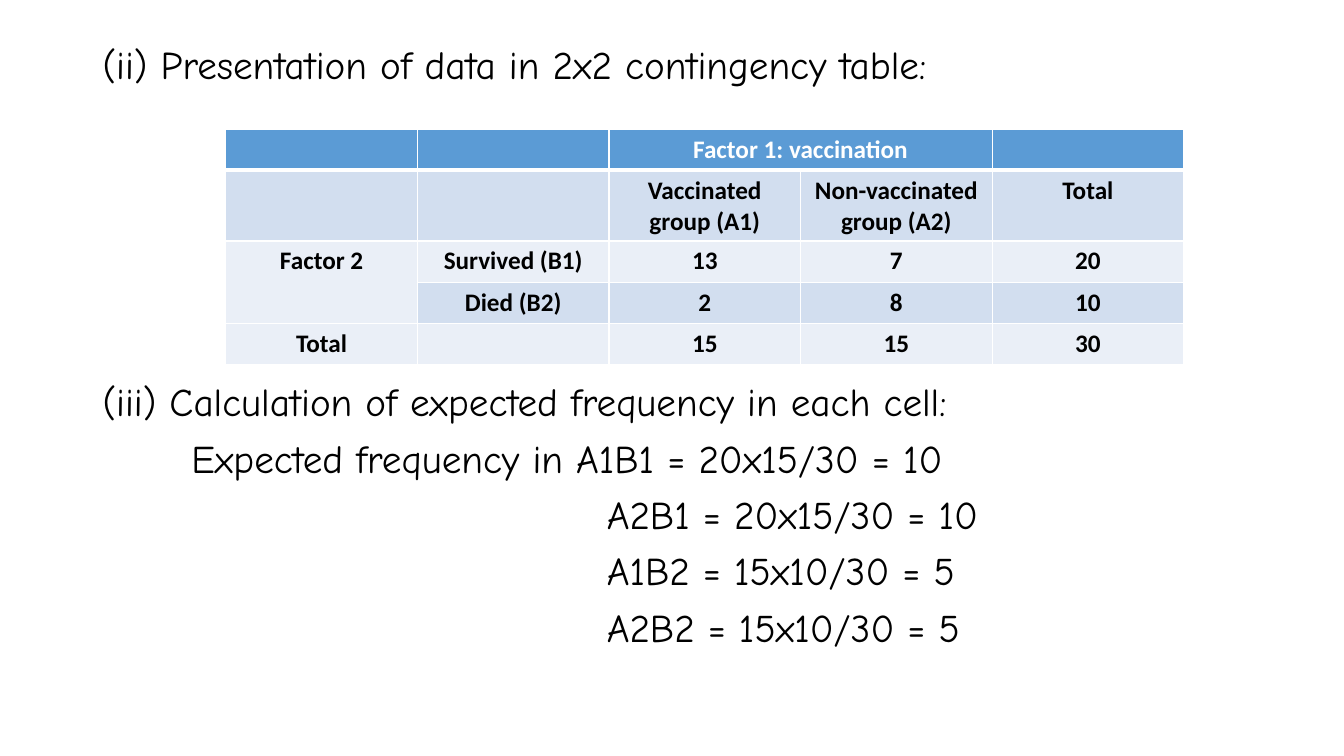
import dataclasses

import lxml.etree
import pptx
import pptx.dml.color
import pptx.enum.text
import pptx.oxml.ns
import pptx.util

Inches = pptx.util.Inches
Pt = pptx.util.Pt


@dataclasses.dataclass
class Theme:
    body_font: str = "Comic Neue"
    table_font: str = "Calibri"
    body_size: int = 28
    table_size: int = 18
    black: str = "000000"
    white: str = "FFFFFF"
    header: str = "5B9BD5"
    bands: tuple = ("D2DEEF", "EAEFF7")
    line_spacing: float = 0.9
    space_before: int = 10
    border: int = 1
    header_border: int = 3


class SlideBuilder:
    def __init__(self, slide, theme):
        self.slide = slide
        self.theme = theme

    def format_font(self, paragraph, color, **values):
        for name, value in values.items():
            setattr(paragraph.font, name, value)
        paragraph.font.color.rgb = pptx.dml.color.RGBColor.from_string(color)

    def text(self, left, top, width, height, lines):
        """Lines are pairs of text and left indent in inches."""
        theme = self.theme
        box = self.slide.shapes.add_textbox(
            Inches(left), Inches(top), Inches(width), Inches(height))
        frame = box.text_frame
        frame.word_wrap = True
        for index, (content, indent) in enumerate(lines):
            paragraph = frame.add_paragraph() if index else frame.paragraphs[0]
            paragraph.text = content
            paragraph.line_spacing = theme.line_spacing
            paragraph.space_before = Pt(theme.space_before if index else 0)
            if indent:
                properties = paragraph._p.get_or_add_pPr()
                properties.set("marL", str(Inches(indent)))
                properties.set("indent", "0")
            self.format_font(paragraph, theme.black,
                             name=theme.body_font, size=Pt(theme.body_size))

    def cell_borders(self, cell, widths):
        properties = cell._tc.get_or_add_tcPr()
        for side, width in widths.items():
            line = lxml.etree.SubElement(
                properties, pptx.oxml.ns.qn(f"a:ln{side}"), w=str(Pt(width)))
            fill = lxml.etree.SubElement(line, pptx.oxml.ns.qn("a:solidFill"))
            lxml.etree.SubElement(
                fill, pptx.oxml.ns.qn("a:srgbClr"), val=self.theme.white)

    def table(self, left, top, column_width, row_heights, rows, merges):
        theme = self.theme
        column_count = len(rows[0])
        table = self.slide.shapes.add_table(
            len(rows), column_count, Inches(left), Inches(top),
            Inches(column_width * column_count), Inches(sum(row_heights))).table
        for row, height in zip(table.rows, row_heights):
            row.height = Inches(height)
        for row_index, values in enumerate(rows):
            is_header = row_index == 0
            fill = theme.header if is_header else theme.bands[(row_index - 1) % 2]
            widths = dict.fromkeys("LRTB", theme.border)
            if is_header:
                widths["B"] = theme.header_border
            elif row_index == 1:
                widths["T"] = theme.header_border
            for column_index, value in enumerate(values):
                cell = table.cell(row_index, column_index)
                self.cell_borders(cell, widths)
                cell.fill.solid()
                cell.fill.fore_color.rgb = pptx.dml.color.RGBColor.from_string(fill)
                paragraph = cell.text_frame.paragraphs[0]
                paragraph.text = value
                paragraph.alignment = pptx.enum.text.PP_ALIGN.CENTER
                self.format_font(
                    paragraph, theme.white if is_header else theme.black,
                    name=theme.table_font, size=Pt(theme.table_size), bold=True)
        for first, last in merges:
            table.cell(*first).merge(table.cell(*last))


def main():
    presentation = pptx.Presentation()
    presentation.slide_width = Inches(13.33)
    presentation.slide_height = Inches(7.5)
    slide = presentation.slides.add_slide(presentation.slide_layouts[6])
    builder = SlideBuilder(slide, Theme())

    # Heading of the table
    builder.text(0.92, 0.4, 11.5, 0.6, [
        ("(ii) Presentation of data in 2x2 contingency table:", 0)])

    # Contingency table
    builder.table(
        2.24, 1.28, 1.9, [0.41, 0.7, 0.41, 0.41, 0.41],
        [["", "", "Factor 1: vaccination", "", ""],
         ["", "", "Vaccinated group (A1)", "Non-vaccinated group (A2)", "Total"],
         ["Factor 2", "Survived (B1)", "13", "7", "20"],
         ["", "Died (B2)", "2", "8", "10"],
         ["Total", "", "15", "15", "30"]],
        merges=[((0, 2), (0, 3)), ((2, 0), (3, 0))])

    # Expected frequencies
    result_indent = 5
    builder.text(0.92, 3.75, 11.5, 3, [
        ("(iii) Calculation of expected frequency in each cell:", 0),
        ("Expected frequency in A1B1 = 20x15/30 = 10", 0.88),
        ("A2B1 = 20x15/30 = 10", result_indent),
        ("A1B2 = 15x10/30 = 5", result_indent),
        ("A2B2 = 15x10/30 = 5", result_indent)])

    presentation.save("out.pptx")


if __name__ == "__main__":
    main()
